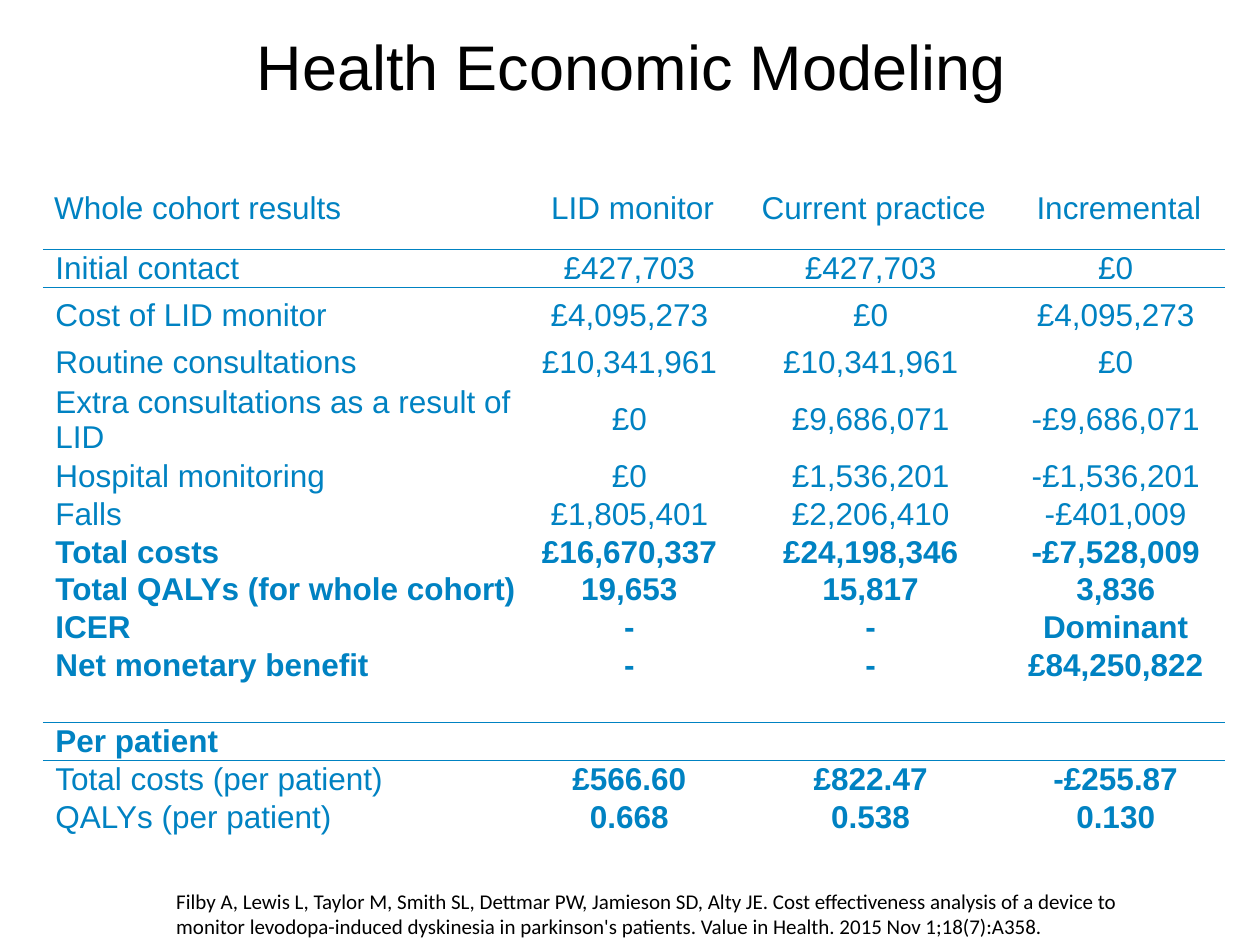
from lxml import etree
from pptx import Presentation, util as u
from pptx.dml.color import RGBColor
from pptx.enum import text
from pptx.oxml import ns

BLACK = RGBColor(0x00, 0x00, 0x00)
BLUE = RGBColor(0x00, 0x82, 0xC2)
SLIDE_WIDTH, SLIDE_HEIGHT = u.Inches(10), u.Inches(7.5)
GRID_COLUMNS, GRID_ROWS = 1000, 750
NO_GRID_STYLE = "{2D5ABB26-0587-4C30-8999-92F81FD0307C}"

COLUMN_WIDTHS = (382, 167, 216, 173)
LINE_ROWS = 30
TALL_ROWS = {0: 65, 2: 45, 4: 60}
BOLD_LABELS = range(7, 13)
BOLD_VALUES = range(7, 15)
RULED_ROWS = {0: "lnB", 1: "lnT", 11: "lnB", 12: "lnT"}
BLANK = ("", "", "", "")
RESULTS = (
    ("Whole cohort results", "LID monitor", "Current practice", "Incremental"),
    ("Initial contact", "£427,703", "£427,703", "£0"),
    ("Cost of LID monitor", "£4,095,273", "£0", "£4,095,273"),
    ("Routine consultations", "£10,341,961", "£10,341,961", "£0"),
    ("Extra consultations as a result of LID", "£0", "£9,686,071", "-£9,686,071"),
    ("Hospital monitoring", "£0", "£1,536,201", "-£1,536,201"),
    ("Falls", "£1,805,401", "£2,206,410", "-£401,009"),
    ("Total costs", "£16,670,337", "£24,198,346", "-£7,528,009"),
    ("Total QALYs (for whole cohort)", "19,653", "15,817", "3,836"),
    ("ICER", "-", "-", "Dominant"),
    ("Net monetary benefit", "-", "-", "£84,250,822"),
    BLANK,
    ("Per patient", "", "", ""),
    ("Total costs (per patient)", "£566.60", "£822.47", "-£255.87"),
    ("QALYs (per patient)", "0.668", "0.538", "0.130"),
    BLANK,
)
CITATION = (
    "Filby A, Lewis L, Taylor M, Smith SL, Dettmar PW, Jamieson SD, Alty JE. "
    "Cost effectiveness analysis of a device to monitor levodopa-induced "
    "dyskinesia in parkinson's patients. Value in Health. 2015 Nov 1;18(7):A358."
)


def across(columns):
    """Turn grid columns into a length."""
    return round(SLIDE_WIDTH * columns / GRID_COLUMNS)


def down(rows):
    """Turn grid rows into a length."""
    return round(SLIDE_HEIGHT * rows / GRID_ROWS)


def area(left, top, width, height):
    """Turn a block of the grid into left, top, width and height."""
    return across(left), down(top), across(width), down(height)


def write(frame, words, *, size, font="Arial", color=BLACK, bold=False,
          align=text.PP_ALIGN.LEFT, indent=0):
    """Put one formatted paragraph into a text frame."""
    para = frame.paragraphs[0]
    para.alignment = align
    if indent:
        para._p.get_or_add_pPr().set("marL", str(across(indent)))
    span = para.add_run()
    span.text = words
    span.font.name = font
    span.font.size = u.Pt(size)
    span.font.bold = bold
    span.font.color.rgb = color


def rule_cell(cell, side):
    """Draw a one-point blue border on one side of a cell."""
    line = etree.Element(ns.qn("a:" + side), w=str(u.Pt(1)))
    fill = etree.SubElement(line, ns.qn("a:solidFill"))
    etree.SubElement(fill, ns.qn("a:srgbClr"), val=str(BLUE))
    cell._tc.get_or_add_tcPr().insert(0, line)


def fill_cell(cell, words, row, column):
    """Format one result cell by its place in the table."""
    is_label, is_header = column == 0, row == 0
    margin = across(4 if is_header else 0)
    cell.margin_left = cell.margin_right = margin
    cell.margin_top = cell.margin_bottom = margin
    cell.vertical_anchor = text.MSO_ANCHOR.MIDDLE
    cell.fill.background()
    if row in RULED_ROWS:
        rule_cell(cell, RULED_ROWS[row])
    if words:
        write(cell.text_frame, words, size=18, color=BLUE,
              bold=row in (BOLD_LABELS if is_label else BOLD_VALUES),
              align=text.PP_ALIGN.LEFT if is_label else text.PP_ALIGN.CENTER,
              indent=5 if is_header else 10 if is_label else 0)


def add_results(page):
    """Add the table of cohort and per-patient results."""
    heights = [TALL_ROWS.get(row, LINE_ROWS) for row in range(len(RESULTS))]
    frame = page.shapes.add_table(
        len(RESULTS), len(COLUMN_WIDTHS),
        *area(34, 133, sum(COLUMN_WIDTHS), sum(heights)))
    table = frame.table
    table.first_row = table.horz_banding = False
    table._tbl.tblPr.find(ns.qn("a:tableStyleId")).text = NO_GRID_STYLE
    for column, width in zip(table.columns, COLUMN_WIDTHS):
        column.width = across(width)
    for row, height in zip(table.rows, heights):
        row.height = down(height)
    for row, entries in enumerate(RESULTS):
        for column, words in enumerate(entries):
            fill_cell(table.cell(row, column), words, row, column)


def set_title(page, words):
    """Place the title and lift its line above the middle of the box."""
    title = page.shapes.title
    title.left, title.top, title.width, title.height = area(51, 5, 900, 123)
    frame = title.text_frame
    frame.vertical_anchor = text.MSO_ANCHOR.MIDDLE
    frame.margin_bottom = down(34)
    write(frame, words, size=36, align=text.PP_ALIGN.CENTER)


def add_citation(page):
    """Add the reference under the table."""
    box = page.shapes.add_textbox(*area(130, 700, 795, 50))
    box.text_frame.word_wrap = True
    write(box.text_frame, CITATION, size=12, font="Calibri")


def main():
    """Build and save the slide."""
    deck = Presentation()
    deck.slide_width, deck.slide_height = SLIDE_WIDTH, SLIDE_HEIGHT
    page = deck.slides.add_slide(deck.slide_layouts[5])
    set_title(page, "Health Economic Modeling")
    add_citation(page)
    add_results(page)
    deck.save("out.pptx")


if __name__ == "__main__":
    main()
